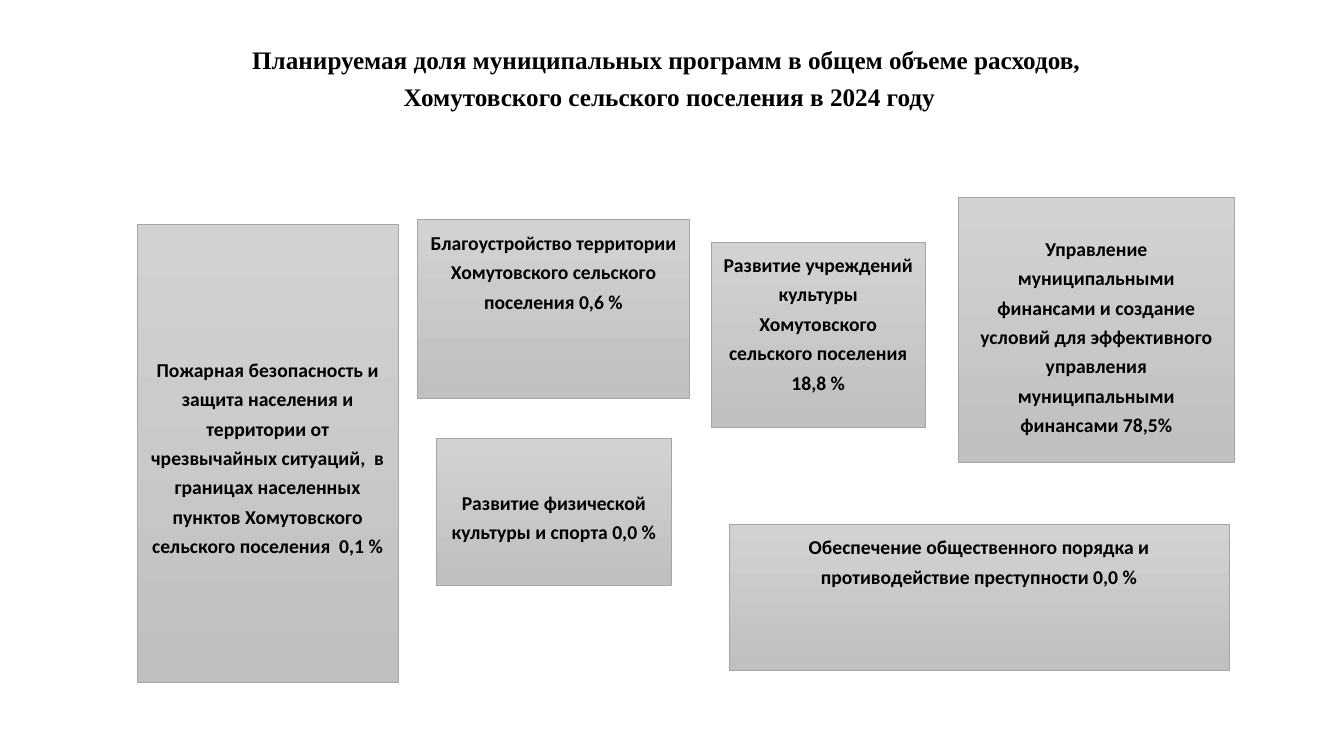
"""Build the slide on the planned share of municipal programmes in 2024 spending."""
from pptx import Presentation
from pptx.dml.color import RGBColor
from pptx.enum.shapes import MSO_SHAPE as Kind
from pptx.enum.text import MSO_ANCHOR as Anchor, PP_ALIGN as Align
from pptx.util import Inches, Pt

deck = Presentation()
deck.slide_width, deck.slide_height = Inches(13.33), Inches(7.5)
slide = deck.slides.add_slide(deck.slide_layouts[6])


def place(left, top, width, height):
    """Turn percentages of the slide into lengths."""
    wide, high = deck.slide_width / 100, deck.slide_height / 100
    return int(left * wide), int(top * high), int(width * wide), int(height * high)


def write(frame, lines, font, size, after, inset):
    """Fill a frame with bold centred lines, inset from its top in percent."""
    look = {"word_wrap": True, "vertical_anchor": Anchor.TOP,
            "margin_top": int(inset * deck.slide_height / 100)}
    for name, value in look.items():
        setattr(frame, name, value)
    frame.text = "\n".join(lines)
    for para in frame.paragraphs:
        style = {"alignment": Align.CENTER, "line_spacing": 1.25, "space_after": Pt(after)}
        for name, value in style.items():
            setattr(para, name, value)
        for name, value in {"name": font, "size": Pt(size), "bold": True}.items():
            setattr(para.runs[0].font, name, value)
        para.runs[0].font.color.rgb = RGBColor.from_string("000000")


title = slide.shapes.add_textbox(*place(6.45, 4.13, 86.72, 10.93))
write(title.text_frame,
      ["Планируемая доля муниципальных программ в общем объеме расходов, ",
       "Хомутовского сельского поселения в 2024 году"],
      "Times New Roman", 18, 0, 0.67)

plans = [
    ((10.2, 29.73, 19.43, 60.53), 16.8,
     "Пожарная безопасность и защита населения и территории от чрезвычайных ситуаций,  "
     "в границах населенных пунктов Хомутовского сельского поселения  0,1 %"),
    ((54.24, 69.33, 37.21, 19.33), 0.67,
     "Обеспечение общественного порядка и противодействие преступности 0,0 %"),
    ((71.34, 26.13, 20.48, 35.07), 4.4,
     "Управление муниципальными финансами и создание условий для эффективного "
     "управления муниципальными финансами 78,5%"),
    ((31.06, 29.07, 20.26, 23.6), 0.67,
     "Благоустройство территории Хомутовского сельского поселения 0,6 %"),
    ((52.89, 32, 15.98, 24.53), 0.67,
     "Развитие учреждений культуры Хомутовского сельского поселения 18,8 %"),
    ((32.48, 58, 17.48, 19.47), 6.13,
     "Развитие физической культуры и спорта 0,0 %"),
]
for area, inset, text in plans:
    box = slide.shapes.add_shape(Kind.FLOWCHART_PROCESS, *place(*area))
    box.shadow.inherit = False
    box.fill.gradient()
    box.fill.gradient_angle = 270
    for stop, tone in zip(box.fill.gradient_stops, ("D2D2D2", "C0C0C0")):
        stop.color.rgb = RGBColor.from_string(tone)
    box.line.color.rgb = RGBColor.from_string("A5A5A5")
    box.line.width = Pt(0.5)
    write(box.text_frame, [text], "Calibri", 14, 8, inset)

deck.save("out.pptx")
